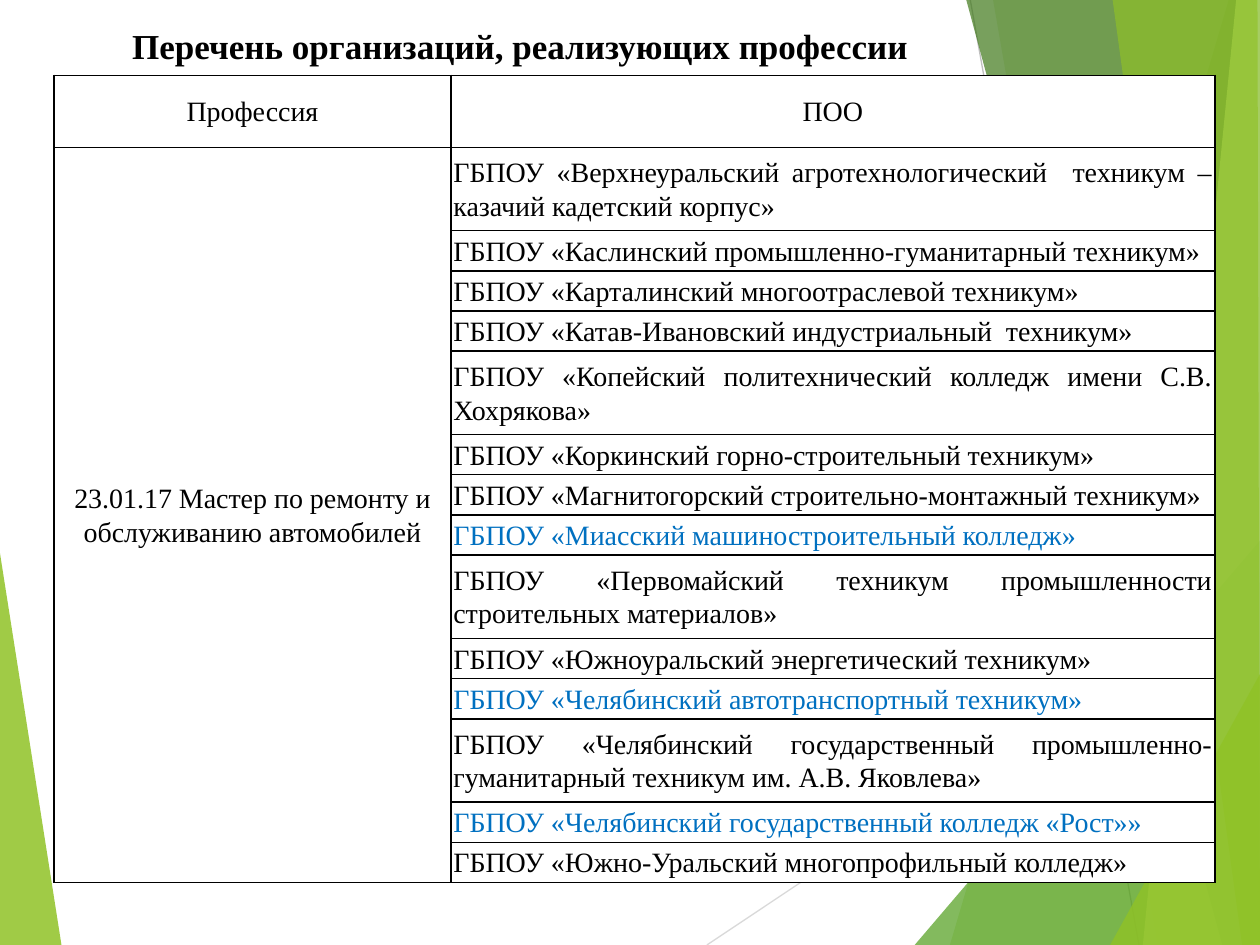
import pptx
import pptx.util
from lxml import etree
from pptx.dml.color import RGBColor
from pptx.enum.shapes import MSO_CONNECTOR
from pptx.enum.text import MSO_ANCHOR, PP_ALIGN
from pptx.oxml.ns import qn
from pptx.util import Cm, Pt

THEME = {
    "font": "Times New Roman",
    "title_size": 20,
    "table_size": 16,
    "text": "000000",
    "highlight": "0070C0",
    "cell": "FFFFFF",
    "border": "000000",
    "leaf": "90C226",
    "grass": "54A021",
    "forest": "3F7819",
    "lime": "C0E474",
    "light_line": "D9D9D9",
    "mid_line": "BFBFBF",
}

SLIDE_WIDTH, SLIDE_HEIGHT = 25.4, 19.05
RIGHT, BOTTOM = SLIDE_WIDTH, SLIDE_HEIGHT

TITLE = "Перечень организаций, реализующих профессии"
HEADINGS = ("Профессия", "ПОО")
PROFESSION = "23.01.17 Мастер по ремонту и обслуживанию автомобилей"
# (organisation, text colour)
ORGANISATIONS = [
    ("ГБПОУ «Верхнеуральский агротехнологический  техникум – казачий кадетский корпус»", "text"),
    ("ГБПОУ «Каслинский промышленно-гуманитарный техникум»", "text"),
    ("ГБПОУ «Карталинский многоотраслевой техникум»", "text"),
    ("ГБПОУ «Катав-Ивановский индустриальный  техникум»", "text"),
    ("ГБПОУ «Копейский политехнический колледж имени С.В. Хохрякова»", "text"),
    ("ГБПОУ «Коркинский горно-строительный техникум»", "text"),
    ("ГБПОУ «Магнитогорский строительно-монтажный техникум»", "text"),
    ("ГБПОУ «Миасский машиностроительный колледж»", "highlight"),
    ("ГБПОУ «Первомайский техникум промышленности строительных материалов»", "text"),
    ("ГБПОУ «Южноуральский энергетический техникум»", "text"),
    ("ГБПОУ «Челябинский автотранспортный техникум»", "highlight"),
    ("ГБПОУ «Челябинский государственный промышленно-гуманитарный техникум "
     "им. А.В. Яковлева»", "text"),
    ("ГБПОУ «Челябинский государственный колледж «Рост»»", "highlight"),
    ("ГБПОУ «Южно-Уральский многопрофильный колледж»", "text"),
]

# Table measures in centimetres
TABLE_LEFT, TABLE_TOP = 1.09, 1.52
COLUMN_WIDTHS = (8, 15.4)
HEADING_HEIGHT, ONE_LINE_HEIGHT, TWO_LINE_HEIGHT = 1.45, 0.81, 1.68
CHARACTERS_PER_LINE = 55

# (colour, opacity in percent, corners in centimetres), back to front
LEFT_FACET = ("leaf", 85, [(0, 11.15), (1.24, BOTTOM), (0, BOTTOM)])
RIGHT_FACETS = [
    ("leaf", 30, [(24.77, 0), (19.15, BOTTOM), (RIGHT, BOTTOM), (RIGHT, 0)]),
    ("leaf", 20, [(20.02, 0), (23.34, BOTTOM), (RIGHT, BOTTOM), (RIGHT, 0)]),
    ("grass", 72, [(18.44, BOTTOM), (RIGHT, 10.9), (RIGHT, BOTTOM)]),
    ("forest", 70, [(19.48, 0), (24.64, BOTTOM), (RIGHT, BOTTOM), (RIGHT, 0)]),
    ("lime", 70, [(24.92, 0), (23.04, BOTTOM), (RIGHT, BOTTOM), (RIGHT, 0)]),
    ("leaf", 65, [(22.43, 0), (25.04, BOTTOM), (RIGHT, BOTTOM), (25.35, 0)]),
    ("leaf", 80, [(22.38, BOTTOM), (RIGHT, 13.59), (RIGHT, BOTTOM)]),
]
RAYS = [
    ("light_line", (14.25, BOTTOM), (RIGHT, 11.61)),
    ("mid_line", (19.56, 0), (22.96, BOTTOM)),
]


def theme_color(name):
    return RGBColor.from_string(THEME[name])


def add_facet(slide, color, opacity, corners):
    points = [(Cm(x), Cm(y)) for x, y in corners]
    builder = slide.shapes.build_freeform(*points[0], scale=1.0)
    builder.add_line_segments(points[1:], close=True)
    facet = builder.convert_to_shape()
    facet.shadow.inherit = False
    facet.line.fill.background()
    facet.fill.solid()
    facet.fill.fore_color.rgb = theme_color(color)
    color_element = facet.fill._xPr.find(qn("a:solidFill"))[0]
    etree.SubElement(color_element, qn("a:alpha"), val=str(opacity * 1000))


def add_ray(slide, color, start, end):
    ray = slide.shapes.add_connector(
        MSO_CONNECTOR.STRAIGHT, *(Cm(value) for value in start + end))
    ray.line.color.rgb = theme_color(color)
    ray.line.width = Pt(0.75)
    etree.SubElement(ray._element.spPr, qn("a:effectLst"))


def write(frame, text, size, color="text", align=PP_ALIGN.CENTER, bold=False):
    para = frame.paragraphs[0]
    para.alignment = align
    span = para.add_run()
    span.text = text
    span.font.name = THEME["font"]
    span.font.size = Pt(THEME[size])
    span.font.bold = bold
    span.font.color.rgb = theme_color(color)
    return para


def add_title(slide):
    box = slide.shapes.add_textbox(Cm(0.89), Cm(0.36), Cm(19.2), Cm(1.6))
    box.text_frame.word_wrap = True
    write(box.text_frame, TITLE, "title_size", bold=True)


def style_cell(cell):
    """Give the cell its fill, margins and a thin border on all four sides."""
    cell.fill.solid()
    cell.fill.fore_color.rgb = theme_color("cell")
    cell.vertical_anchor = MSO_ANCHOR.MIDDLE
    cell.margin_left = cell.margin_right = Cm(0.05)
    cell.margin_top = cell.margin_bottom = 0
    properties = cell._tc.get_or_add_tcPr()
    for position, side in enumerate(("a:lnL", "a:lnR", "a:lnT", "a:lnB")):
        border = etree.Element(qn(side), w=str(Pt(1)))
        fill = etree.SubElement(border, qn("a:solidFill"))
        etree.SubElement(fill, qn("a:srgbClr"), val=THEME["border"])
        properties.insert(position, border)


def fill_cell(cell, text, color="text", align=PP_ALIGN.CENTER):
    para = write(cell.text_frame, text, "table_size", color, align)
    para.line_spacing = 1.07


def add_organisation_table(slide):
    heights = [HEADING_HEIGHT] + [
        TWO_LINE_HEIGHT if len(name) > CHARACTERS_PER_LINE else ONE_LINE_HEIGHT
        for name, _ in ORGANISATIONS]
    table = slide.shapes.add_table(
        len(heights), len(COLUMN_WIDTHS), Cm(TABLE_LEFT), Cm(TABLE_TOP),
        Cm(sum(COLUMN_WIDTHS)), Cm(sum(heights))).table
    for column, width in zip(table.columns, COLUMN_WIDTHS):
        column.width = Cm(width)
    for row, height in zip(table.rows, heights):
        row.height = Cm(height)
        for cell in row.cells:
            style_cell(cell)

    for column_index, heading in enumerate(HEADINGS):
        fill_cell(table.cell(0, column_index), heading)
    table.cell(1, 0).merge(table.cell(len(ORGANISATIONS), 0))
    fill_cell(table.cell(1, 0), PROFESSION)
    for row_index, (name, color) in enumerate(ORGANISATIONS, start=1):
        fill_cell(table.cell(row_index, 1), name, color, PP_ALIGN.JUSTIFY)


def main():
    deck = pptx.Presentation()
    deck.slide_width, deck.slide_height = Cm(SLIDE_WIDTH), Cm(SLIDE_HEIGHT)
    page = deck.slides.add_slide(deck.slide_layouts[6])
    add_facet(page, *LEFT_FACET)
    for ray in RAYS:
        add_ray(page, *ray)
    for facet in RIGHT_FACETS:
        add_facet(page, *facet)
    add_title(page)
    add_organisation_table(page)
    deck.save("out.pptx")


if __name__ == "__main__":
    main()
